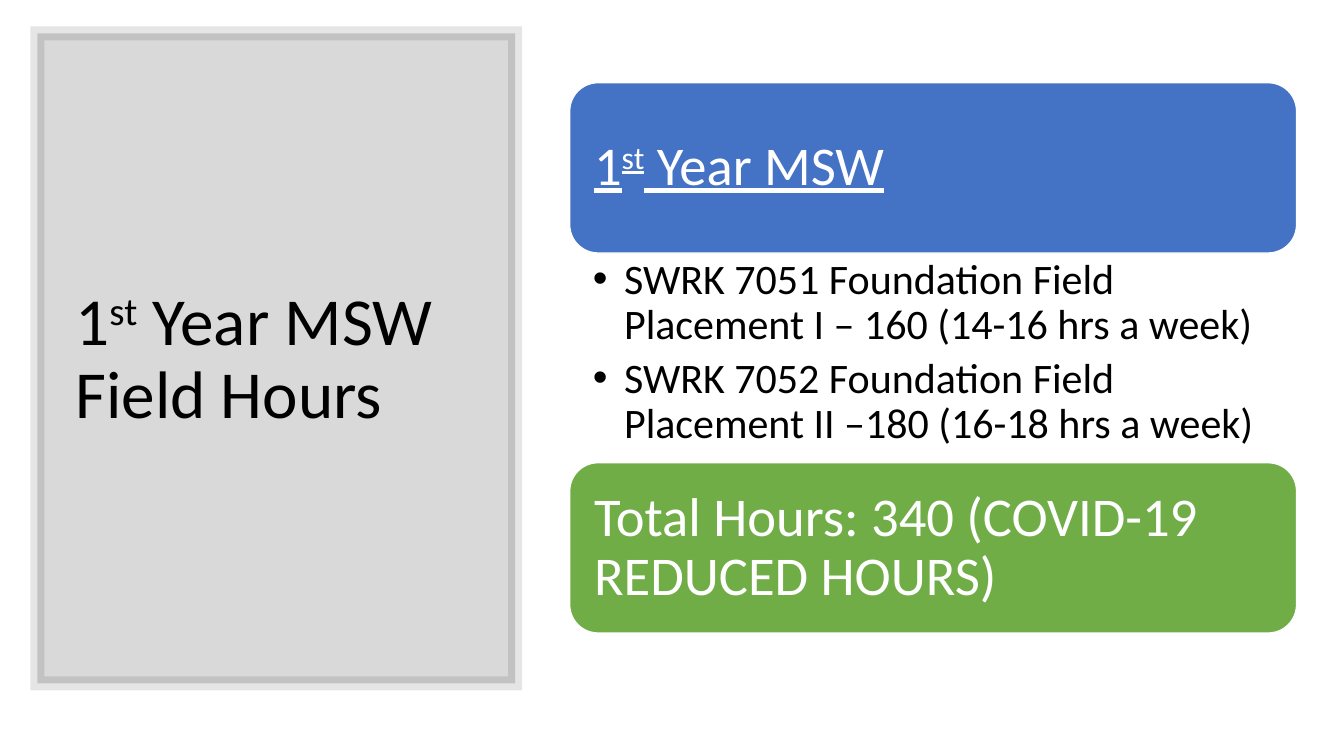
import pptx
import pptx.util
import pptx.dml.color
import pptx.enum.shapes
import pptx.enum.text
import pptx.oxml.ns
import lxml.etree
from dataclasses import dataclass

Inches = pptx.util.Inches
Pt = pptx.util.Pt
SHAPE = pptx.enum.shapes.MSO_SHAPE
ANCHOR = pptx.enum.text.MSO_ANCHOR


@dataclass(frozen=True)
class Theme:
    font: str = "Calibri"
    black: str = "000000"
    white: str = "FFFFFF"
    blue: str = "4472C4"
    green: str = "70AD47"
    title: int = 48
    head: int = 39
    body: int = 30


def color(code):
    return pptx.dml.color.RGBColor.from_string(code)


def child(parent, tag, **attrs):
    return lxml.etree.SubElement(parent, pptx.oxml.ns.qn(tag), attrs)


def write(shape, paras, *, font, size, ink, insets=(0.1, 0.05, 0.1, 0.05),
          anchor=ANCHOR.MIDDLE, under=False, bullet=False, after=0):
    """Each paragraph is a list of parts; every second part is superscript."""
    frame = shape.text_frame
    frame.word_wrap = True
    frame.vertical_anchor = anchor
    (frame.margin_left, frame.margin_top,
     frame.margin_right, frame.margin_bottom) = map(Inches, insets)
    for i, parts in enumerate(paras):
        para = frame.paragraphs[0] if i == 0 else frame.add_paragraph()
        para.alignment = pptx.enum.text.PP_ALIGN.LEFT
        para.line_spacing = 0.9
        para.space_after = Pt(after)
        if bullet:
            props = para._p.get_or_add_pPr()
            props.set("marL", str(Inches(0.31)))
            props.set("indent", str(-Inches(0.31)))
            child(props, "a:buFont", typeface="Arial")
            child(props, "a:buChar", char="•")
        for j, part in enumerate(parts):
            run = para.add_run()
            run.text = part
            run.font.name = font
            run.font.size = Pt(size)
            run.font.color.rgb = color(ink)
            run.font.underline = under
            if j % 2:
                run.font._element.set("baseline", "30000")


class Deck:
    def __init__(self, theme):
        self.theme = theme
        self.file = pptx.Presentation()
        self.file.slide_width = Inches(13.33)
        self.file.slide_height = Inches(7.5)
        self.slide = self.file.slides.add_slide(self.file.slide_layouts[6])

    def block(self, kind, box, fill, line, width):
        shape = self.slide.shapes.add_shape(kind, *map(Inches, box))
        shape.shadow.inherit = False
        shape.fill.solid()
        shape.fill.fore_color.rgb = color(fill)
        shape.line.color.rgb = color(line)
        shape.line.width = Pt(width)
        return shape

    def panel(self, box):
        ink = self.theme.black
        shape = self.block(SHAPE.RECTANGLE, box, ink, ink, 10)
        # Fill and border are see-through, so the border shows two tones
        props = shape._element.spPr
        line = props.find(pptx.oxml.ns.qn("a:ln"))
        for part, alpha in ((props, 15), (line, 10)):
            tone = part.find(pptx.oxml.ns.qn("a:solidFill"))[0]
            child(tone, "a:alpha", val=str(alpha * 1000))
        child(line, "a:miter", lim="800000")

    def text(self, box, paras, **style):
        shape = self.slide.shapes.add_textbox(*map(Inches, box))
        write(shape, paras, font=self.theme.font, ink=self.theme.black, **style)

    def card(self, box, parts, fill, under=False):
        theme = self.theme
        shape = self.block(SHAPE.ROUNDED_RECTANGLE, box, fill, theme.white, 1)
        write(shape, [parts], font=theme.font, size=theme.head,
              ink=theme.white, insets=(0.16,) * 4, under=under)


def main():
    theme = Theme()
    deck = Deck(theme)

    # Title panel
    deck.panel((0.37, 0.33, 4.74, 6.45))
    deck.text((0.65, 0.7, 4.16, 5.75), [["1", "st", " Year MSW Field Hours"]],
              size=theme.title)

    # Stack of heading, courses and total
    left, top, width = 5.65, 0.82, 7.21
    card, gap = 1.69, 2.08
    deck.card((left, top, width, card), ["1", "st", " Year MSW"],
              theme.blue, under=True)
    deck.text((left, top + card, width, gap),
              [["SWRK 7051 Foundation Field Placement I – 160 (14-16 hrs a week)"],
               ["SWRK 7052 Foundation Field Placement II –180 (16-18 hrs a week)"]],
              size=theme.body, insets=(0.23, 0.05, 0.3, 0.05),
              anchor=ANCHOR.TOP, bullet=True, after=6)
    deck.card((left, top + card + gap, width, card),
              ["Total Hours: 340 (COVID-19 REDUCED HOURS)"], theme.green)

    deck.file.save("out.pptx")


if __name__ == "__main__":
    main()
